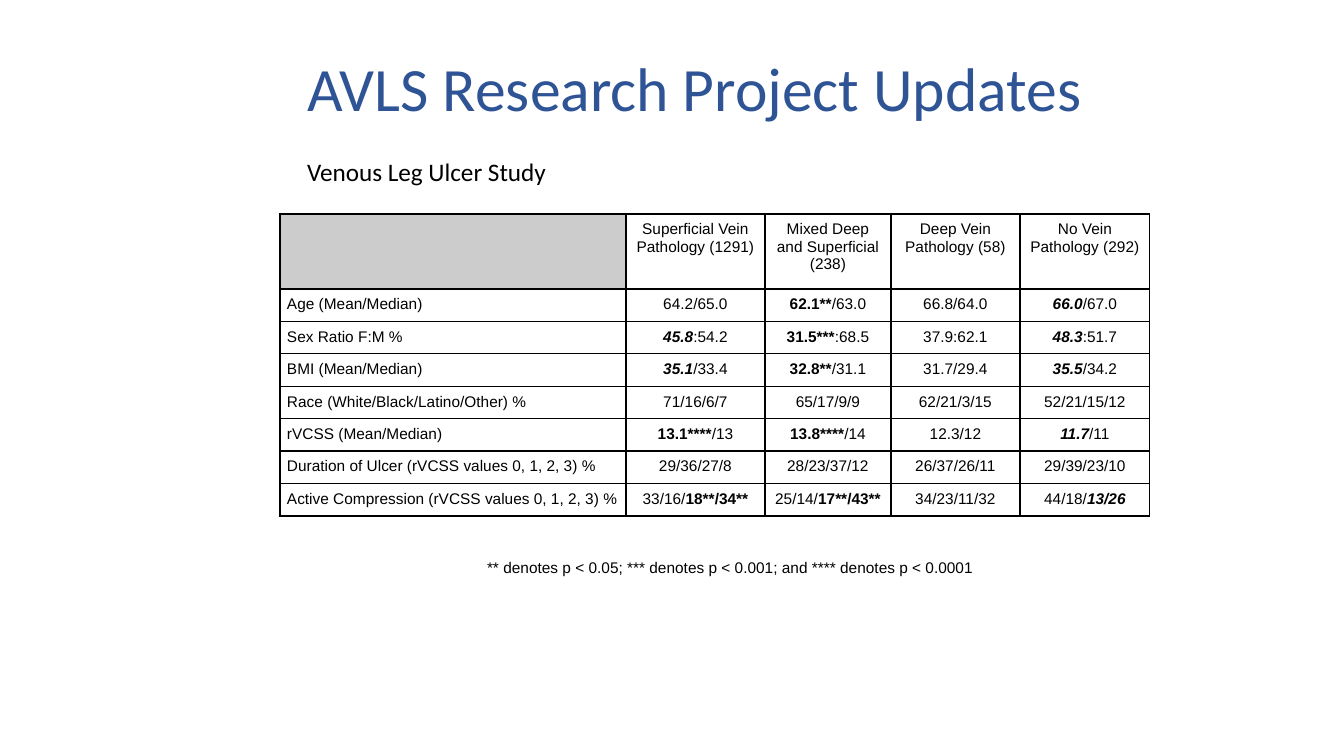
"""Build the slide with the venous leg ulcer study table."""
from lxml import etree
from pptx import Presentation
from pptx.dml.color import RGBColor
from pptx.enum.text import MSO_ANCHOR, MSO_AUTO_SIZE, PP_ALIGN
from pptx.oxml.ns import qn
from pptx.util import Pt

LEFT, MID = PP_ALIGN.LEFT, PP_ALIGN.CENTER
TOP, CENTER = MSO_ANCHOR.TOP, MSO_ANCHOR.MIDDLE
FIXED = MSO_AUTO_SIZE.NONE
BLACK, BLUE, GREY = "000000", "2F5496", "CCCCCC"

TITLE = "AVLS Research Project Updates"
STUDY = "Venous Leg Ulcer Study"
NOTE = "** denotes p < 0.05; *** denotes p < 0.001; and **** denotes p < 0.0001"
ROWS = [
    ["", "Superficial Vein Pathology (1291)", "Mixed Deep and Superficial (238)",
     "Deep Vein Pathology (58)", "No Vein Pathology (292)"],
    ["Age (Mean/Median)", "64.2/65.0", [("62.1**", "b"), ("/63.0", "")],
     "66.8/64.0", [("66.0", "bi"), ("/67.0", "")]],
    ["Sex Ratio F:M %", [("45.8", "bi"), (":54.2", "")], [("31.5***", "b"), (":68.5", "")],
     "37.9:62.1", [("48.3", "bi"), (":51.7", "")]],
    ["BMI (Mean/Median)", [("35.1", "bi"), ("/33.4", "")], [("32.8**", "b"), ("/31.1", "")],
     "31.7/29.4", [("35.5", "bi"), ("/34.2", "")]],
    ["Race (White/Black/Latino/Other) %", "71/16/6/7", "65/17/9/9", "62/21/3/15", "52/21/15/12"],
    ["rVCSS (Mean/Median)", [("13.1****", "b"), ("/13", "")], [("13.8****", "b"), ("/14", "")],
     "12.3/12", [("11.7", "bi"), ("/11", "")]],
    ["Duration of Ulcer (rVCSS values 0, 1, 2, 3) %", "29/36/27/8", "28/23/37/12",
     "26/37/26/11", "29/39/23/10"],
    ["Active Compression (rVCSS values 0, 1, 2, 3) %", [("33/16/", ""), ("18**/34**", "b")],
     [("25/14/", ""), ("17**/43**", "b")], "34/23/11/32", [("44/18/", ""), ("13/26", "bi")]],
]
COLS = [346, 139, 126, 129, 130]
HEAD, BODY = 75, 227
SIDES = ["left", "top", "width", "height"]
EDGES = ["margin_left", "margin_top", "margin_right", "margin_bottom"]


def px(num):
    return round(num * 914400 / 100.8)


def color(code):
    return RGBColor.from_string(code)


def put(item, vals):
    for key, val in vals.items():
        setattr(item, key, val)


def write(para, runs, size, face, code=BLACK):
    for text, style in [(runs, "")] if isinstance(runs, str) else runs:
        run = para.add_run()
        run.text = text
        put(run.font, {"size": Pt(size), "name": face, "bold": "b" in style, "italic": "i" in style})
        run.font.color.rgb = color(code)


def label(shape, box, text, size, face, code, anchor, space):
    put(shape, dict(zip(SIDES, map(px, box))))
    frame = shape.text_frame
    put(frame, {"word_wrap": True, "auto_size": FIXED, "vertical_anchor": anchor})
    put(frame, dict(zip(EDGES, map(px, [10, 5, 10, 5]))))
    para = frame.paragraphs[0]
    put(para, {"alignment": LEFT, "line_spacing": space})
    write(para, text, size, face, code)


def border(cell):
    props = cell._tc.get_or_add_tcPr()
    for spot, side in enumerate("LRTB"):
        line = etree.Element(qn(f"a:ln{side}"), w=str(Pt(1)))
        fill = etree.SubElement(line, qn("a:solidFill"))
        etree.SubElement(fill, qn("a:srgbClr"), val=BLACK)
        props.insert(spot, line)


def grid(shapes):
    box = map(px, [280, 214, sum(COLS), HEAD + BODY])
    table = shapes.add_table(len(ROWS), len(COLS), *box).table
    put(table, {"first_row": False, "horz_banding": False})
    for col, width in zip(table.columns, COLS):
        col.width = px(width)
    for r, row in enumerate(ROWS):
        table.rows[r].height = px(BODY / (len(ROWS) - 1) if r else HEAD)
        for c, runs in enumerate(row):
            cell = table.cell(r, c)
            put(cell, dict.fromkeys(EDGES, px(7)))
            if runs:
                cell.fill.background()
                para = cell.text_frame.paragraphs[0]
                para.alignment = MID if c else LEFT
                write(para, runs, 11, "Arial")
            else:
                cell.fill.solid()
                cell.fill.fore_color.rgb = color(GREY)
            border(cell)


def main():
    deck = Presentation()
    put(deck, {"slide_width": px(1344), "slide_height": px(756)})
    shapes = deck.slides.add_slide(deck.slide_layouts[5]).shapes
    label(shapes.title, [297, 19, 827, 146], TITLE, 44, "Calibri", BLUE, CENTER, 0.9)
    for box, *form in [
        ([297, 149, 977, 129], STUDY, 18, "Calibri", BLACK, TOP, 1.07),
        ([477, 551, 582, 33], NOTE, 11, "Arial", BLACK, CENTER, 1.0),
    ]:
        label(shapes.add_textbox(0, 0, 0, 0), box, *form)
    grid(shapes)
    deck.save("out.pptx")


if __name__ == "__main__":
    main()
